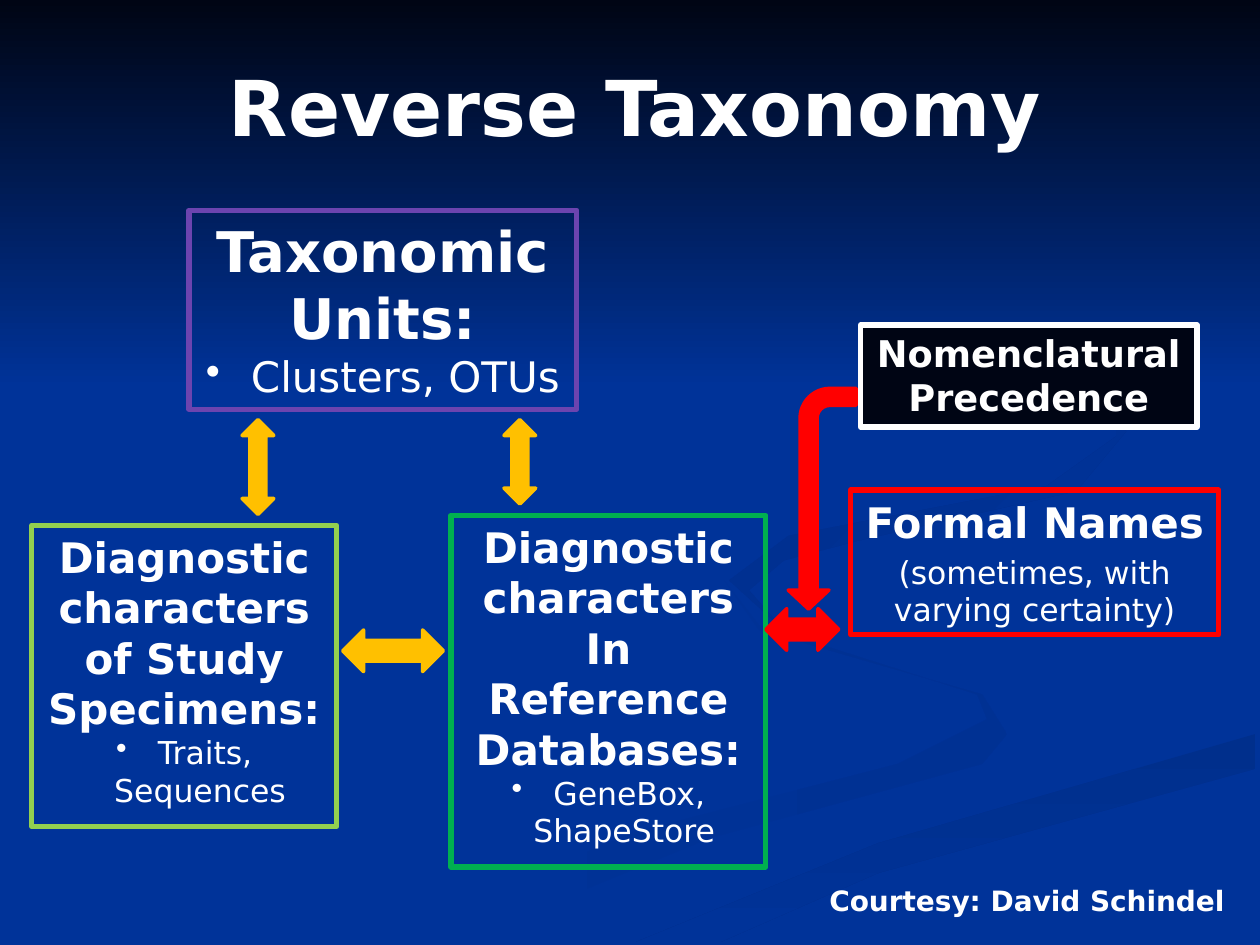
from lxml import etree
from pptx import Presentation
from pptx.dml.color import RGBColor
from pptx.enum.shapes import MSO_SHAPE
from pptx.enum.text import MSO_ANCHOR, MSO_AUTO_SIZE, PP_ALIGN
from pptx.oxml.ns import qn
from pptx.util import Cm, Pt

RECTANGLE = MSO_SHAPE.RECTANGLE
VERTICAL_ARROW = MSO_SHAPE.UP_DOWN_ARROW
HORIZONTAL_ARROW = MSO_SHAPE.LEFT_RIGHT_ARROW
BENT_ARROW = MSO_SHAPE.BENT_ARROW
TOP, MIDDLE = MSO_ANCHOR.TOP, MSO_ANCHOR.MIDDLE
CENTER, RIGHT = PP_ALIGN.CENTER, PP_ALIGN.RIGHT
NO_AUTOSIZE = MSO_AUTO_SIZE.NONE

FONT = "DejaVu Sans"
NAVY, BLUE, WHITE = "000514", "003399", "FFFFFF"
AMBER, RED = "FFC000", "FF0000"
OUTLINE_UNIT = Cm(0.1)

SWOOSHES = [
    (BLUE, "003193", 0, [
        (198, 140), (153, 127), (146, 117), (153, 126), (197, 140), (199, 145),
        (181, 154), (127, 168), (76, 190), (92, 190), (143, 169), (198, 154), (203, 148)]),
    ("002F8C", BLUE, 90, [
        (128, 190), (145, 190), (177, 176), (253, 155), (253, 148), (177, 170)]),
    ("002F8E", BLUE, 45, [
        (173, 109), (217, 99), (227, 87), (225, 80), (225, 88), (211, 98),
        (159, 108), (147, 117), (158, 127), (151, 119), (158, 113)]),
]


def color(value):
    return RGBColor.from_string(value)


def fill_gradient(fill, first, last, clockwise_angle):
    fill.gradient()
    fill.gradient_angle = -clockwise_angle % 360
    for stop, value in zip(fill.gradient_stops, (first, last)):
        stop.color.rgb = color(value)


def add_swoosh(slide, first, last, angle, points):
    builder = slide.shapes.build_freeform(*points[0], scale=OUTLINE_UNIT)
    builder.add_line_segments(points[1:], close=True)
    shape = builder.convert_to_shape()
    shape.shadow.inherit = False
    shape.line.fill.background()
    fill_gradient(shape.fill, first, last, angle)


def add_backdrop(presentation, slide):
    slide.background.fill.solid()
    slide.background.fill.fore_color.rgb = color(BLUE)
    for swoosh in SWOOSHES:
        add_swoosh(slide, *swoosh)
    shade = slide.shapes.add_shape(RECTANGLE, 0, 0, presentation.slide_width, Cm(7.82))
    shade.shadow.inherit = False
    shade.line.fill.background()
    fill_gradient(shade.fill, NAVY, BLUE, 90)


def add_block(slide, kind, place, line, fill=None, width=2):
    shape = slide.shapes.add_shape(kind, *map(Cm, place))
    shape.shadow.inherit = False
    shape.line.color.rgb = color(line)
    shape.line.width = Pt(width)
    if fill:
        shape.fill.solid()
        shape.fill.fore_color.rgb = color(fill)
    else:
        shape.fill.background()
    return shape


def prepare_frame(shape, anchor=TOP, wrap=True):
    frame = shape.text_frame
    frame.auto_size = NO_AUTOSIZE
    frame.word_wrap = wrap
    frame.vertical_anchor = anchor
    return frame


def write_text(paragraph, text, size=24, bold=True, align=CENTER, bullet=False, after=0):
    paragraph.alignment = align
    paragraph.space_before = Pt(0)
    paragraph.space_after = Pt(after)
    run = paragraph.add_run()
    run.text = text
    run.font.name = FONT
    run.font.size = Pt(size)
    run.font.bold = bold
    run.font.color.rgb = color(WHITE)
    if bullet:
        properties = paragraph._p.get_or_add_pPr()
        properties.set("marL", str(Cm(0.64)))
        properties.set("indent", str(-Cm(0.64)))
        etree.SubElement(properties, qn("a:buChar")).set("char", "•")


def add_box(slide, place, line, heading, size=24, detail=None, detail_size=18,
            bullet=True, fill=None, anchor=TOP, after=0):
    shape = add_block(slide, RECTANGLE, place, line, fill, width=3)
    frame = prepare_frame(shape, anchor)
    write_text(frame.paragraphs[0], heading, size=size, after=after)
    if detail:
        write_text(frame.add_paragraph(), detail, size=detail_size, bold=False, bullet=bullet)


def add_title(slide, text):
    title = slide.shapes.title
    title.left, title.top, title.width, title.height = map(Cm, (0.84, 1.07, 23.93, 2.13))
    write_text(prepare_frame(title).paragraphs[0], text, size=44)
    slide.shapes._spTree.append(title._element)


def add_bent_arrow(slide):
    arrow = add_block(slide, BENT_ARROW, (14.35, 9.37, 4.45, 1.37), RED, RED)
    for index, value in enumerate((0.25, 0.3, 0.28, 0.44)):
        arrow.adjustments[index] = value
    arrow.rotation = 270
    arrow._element.spPr.xfrm.set("flipH", "1")


def add_credit(slide, text):
    credit = slide.shapes.add_textbox(*map(Cm, (16.43, 17.68, 8.51, 0.94)))
    write_text(prepare_frame(credit, wrap=False).paragraphs[0], text, size=16, align=RIGHT)


def main():
    presentation = Presentation()
    presentation.slide_width, presentation.slide_height = Cm(25.4), Cm(19.05)
    slide = presentation.slides.add_slide(presentation.slide_layouts[5])
    add_backdrop(presentation, slide)
    add_title(slide, "Reverse Taxonomy")
    add_box(slide, (0.64, 10.59, 6.15, 6.07), "92D050",
            "Diagnostic characters of Study Specimens:", detail=" Traits, Sequences")
    add_box(slide, (3.81, 4.24, 7.82, 4.01), "6C44AF", "Taxonomic Units:", size=32,
            detail=" Clusters, OTUs ", detail_size=24)
    add_box(slide, (17.15, 9.88, 7.42, 2.92), RED, "Formal Names", after=3, anchor=MIDDLE,
            detail="(sometimes, with varying certainty)", bullet=False)
    add_box(slide, (9.09, 10.39, 6.35, 7.09), "00B050",
            "Diagnostic characters In Reference Databases:", detail=" GeneBox, ShapeStore")
    for kind, place, fill in (
        (VERTICAL_ARROW, (4.88, 8.46, 0.64, 1.91), AMBER),
        (VERTICAL_ARROW, (10.16, 8.46, 0.64, 1.7), AMBER),
        (HORIZONTAL_ARROW, (6.91, 12.7, 2.03, 0.84), AMBER),
        (HORIZONTAL_ARROW, (15.44, 12.27, 1.47, 0.84), RED),
    ):
        add_block(slide, kind, place, fill, fill)
    add_box(slide, (17.35, 6.55, 6.78, 2.06), WHITE, "Nomenclatural Precedence",
            size=21, fill=NAVY)
    add_bent_arrow(slide)
    add_credit(slide, "Courtesy: David Schindel")
    presentation.save("out.pptx")


if __name__ == "__main__":
    main()
